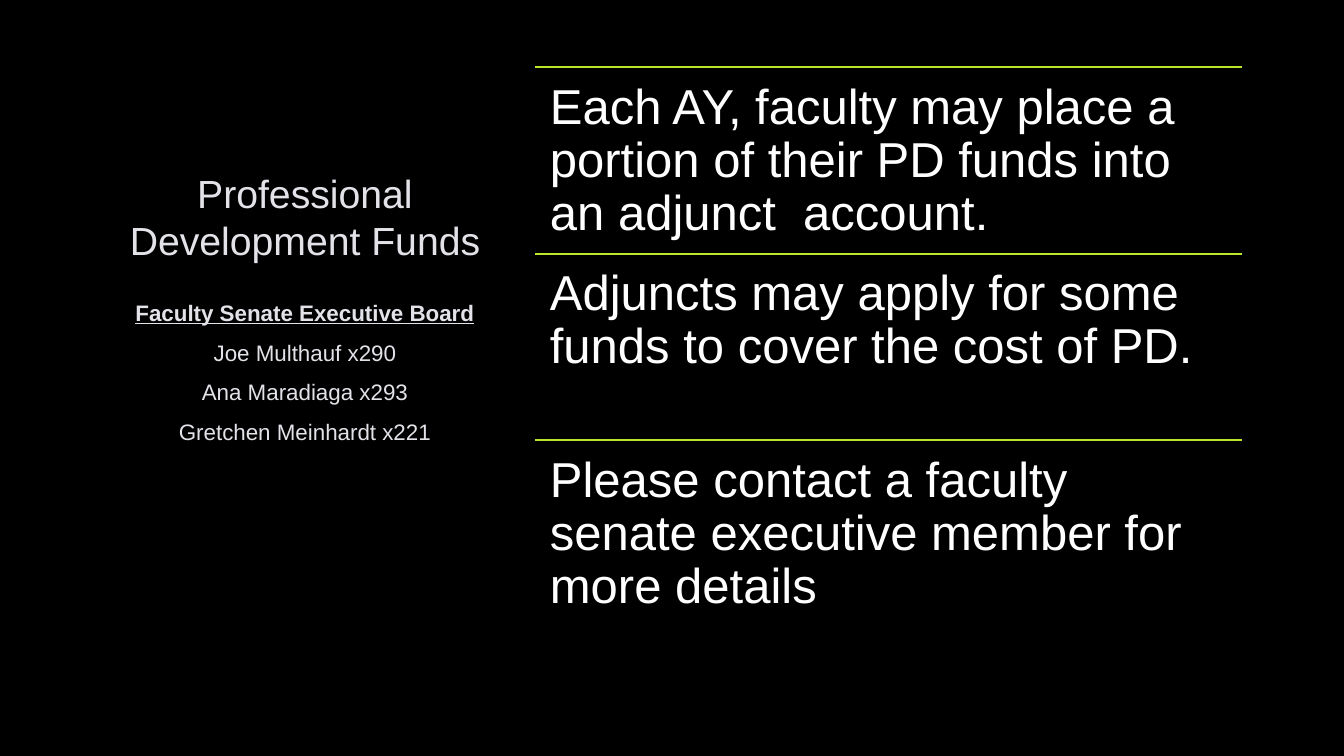
from lxml.etree import SubElement
from pptx import Presentation
from pptx.dml.color import RGBColor
from pptx.enum.shapes import MSO_CONNECTOR
from pptx.enum.text import MSO_ANCHOR, PP_ALIGN
from pptx.oxml import parse_xml
from pptx.oxml.ns import nsdecls, qn
from pptx.util import Pt

FONT = "Arial"
PALE, WHITE, LIME, BLACK = "E3E2E8", "FFFFFF", "B8E729", "000000"
OUTLINE = (
    f'<a:ln {nsdecls("a")} w="9525"><a:solidFill><a:srgbClr val="404040">'
    '<a:alpha val="10000"/></a:srgbClr></a:solidFill></a:ln>'
)


def color(hex_value):
    return RGBColor.from_string(hex_value)


def add_span(para, text, size, hex_value, outlined=False):
    span = para.add_run()
    span.text = text
    span.font.name = FONT
    span.font.size = Pt(size)
    span.font.color.rgb = color(hex_value)
    if outlined:
        span.font._element.insert(0, parse_xml(OUTLINE))
    return span


deck = Presentation()
deck.slide_width, deck.slide_height = Pt(960), Pt(540)
page = deck.slides.add_slide(deck.slide_layouts[6])
page.background.fill.solid()
page.background.fill.fore_color.rgb = color(BLACK)

# Left column: title and contacts
title_box = page.shapes.add_textbox(Pt(72), Pt(48), Pt(291.6), Pt(143.5))
title_box.text_frame.word_wrap = True
title_box.text_frame.vertical_anchor = MSO_ANCHOR.BOTTOM
para = title_box.text_frame.paragraphs[0]
para.alignment = PP_ALIGN.CENTER
add_span(para, "Professional Development Funds", 28, PALE, outlined=True)

contacts = [
    "Faculty Senate Executive Board",
    "Joe Multhauf x290",
    "Ana Maradiaga x293",
    "Gretchen Meinhardt x221",
]
contact_box = page.shapes.add_textbox(Pt(72), Pt(210), Pt(291.6), Pt(237.6))
frame = contact_box.text_frame
frame.word_wrap = True
for index, contact in enumerate(contacts):
    para = frame.add_paragraph() if index else frame.paragraphs[0]
    para.alignment = PP_ALIGN.CENTER
    para.space_before, para.space_after = Pt(3.2), Pt(6)
    span = add_span(para, contact, 16, PALE, outlined=True)
    span.font.bold = span.font.underline = index == 0

# Right column: ruled statements
statements = [
    "Each AY, faculty may place a portion of their PD funds into an adjunct  account.",
    "Adjuncts may apply for some funds to cover the cost of PD.",
    "Please contact a faculty senate executive member for more details",
]
left, top, width, row_height = 382.3, 48, 504.7, 133.2
for index, statement in enumerate(statements):
    row_top = Pt(top + index * row_height)
    rule = page.shapes.add_connector(
        MSO_CONNECTOR.STRAIGHT, Pt(left), row_top, Pt(left + width), row_top)
    rule.line.color.rgb = color(LIME)
    rule.line.width = Pt(1.25)
    SubElement(rule._element.spPr, qn("a:effectLst"))

    box = page.shapes.add_textbox(Pt(left), row_top, Pt(width), Pt(row_height))
    frame = box.text_frame
    frame.word_wrap = True
    frame.margin_left = frame.margin_right = Pt(10.5)
    frame.margin_top = frame.margin_bottom = Pt(10.5)
    para = frame.paragraphs[0]
    para.line_spacing = 0.9
    add_span(para, statement, 35, WHITE)

deck.save("out.pptx")
